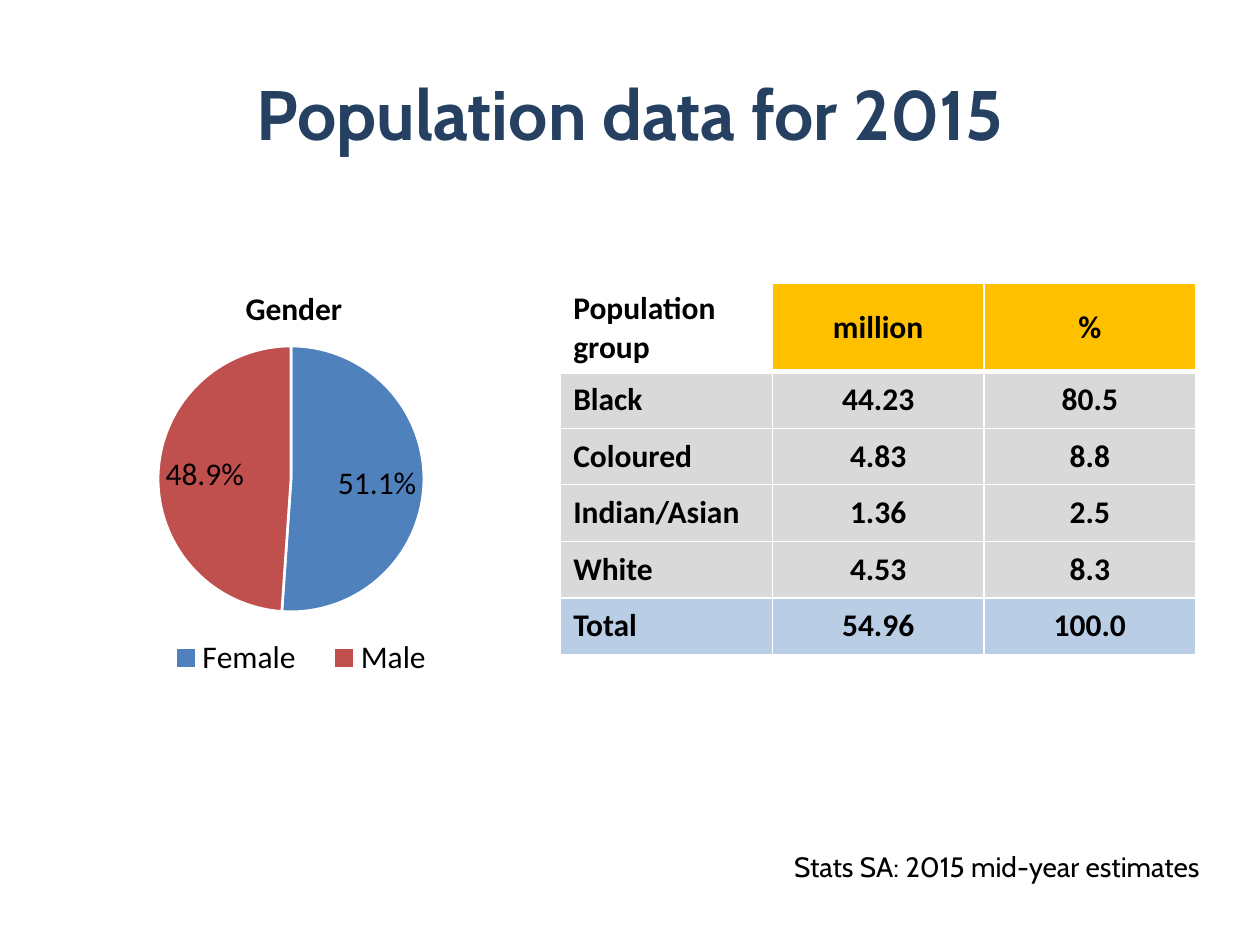
import pptx
import pptx.chart.data
import pptx.dml.color
import pptx.enum.chart
import pptx.enum.text
import pptx.oxml
import pptx.oxml.ns
import pptx.util

Pt = pptx.util.Pt
qn = pptx.oxml.ns.qn
ALIGN = pptx.enum.text.PP_ALIGN
MIDDLE = pptx.enum.text.MSO_ANCHOR.MIDDLE
POS = pptx.enum.chart.XL_LABEL_POSITION
BLACK, WHITE = "000000", "FFFFFF"

TITLE = "Population data for 2015"
SOURCE = "Stats SA: 2015 mid-year estimates"
GENDER = [("Female", 0.511, "4F81BD"), ("Male", 0.489, "C0504D")]
ROWS = [
    ("Population group", "million", "%"),
    ("Black", "44.23", "80.5"),
    ("Coloured", "4.83", "8.8"),
    ("Indian/Asian", "1.36", "2.5"),
    ("White", "4.53", "8.3"),
    ("Total", "54.96", "100.0"),
]
HEAD, BODY, TOTAL = "FFC000", "D9D9D9", "B9CDE5"
TABLE = (320.4, 162, 362.88, 211)
HEAD_H, ROW_H = 49.6, 32.3


def color(code):
    return pptx.dml.color.RGBColor.from_string(code)


def style(font, size, code=BLACK, face="Calibri", bold=False):
    font.size, font.name, font.bold = Pt(size), face, bold
    font.color.rgb = color(code)


def write(frame, text, align, *look):
    """Put one styled run in the first paragraph."""
    para = frame.paragraphs[0]
    para.alignment = align
    run = para.add_run()
    run.text = text
    style(run.font, *look)


def add_text(slide, box, text, align, *look):
    frame = slide.shapes.add_textbox(*map(Pt, box)).text_frame
    frame.word_wrap = True
    frame.vertical_anchor = MIDDLE
    write(frame, text, align, *look)


def border(cell, side, width):
    line = pptx.oxml.parse_xml(
        f'<a:{side} {pptx.oxml.ns.nsdecls("a")} w="{Pt(width)}"><a:solidFill>'
        f'<a:srgbClr val="{WHITE}"/></a:solidFill></a:{side}>')
    cell.fill  # borders go ahead of the fill in the cell properties
    props = cell._tc.get_or_add_tcPr()
    spot = len(props.findall(qn("a:lnL")) + props.findall(qn("a:lnR"))
               + props.findall(qn("a:lnT")))
    props.insert(spot, line)


def add_table(slide):
    table = slide.shapes.add_table(len(ROWS), 3, *map(Pt, TABLE)).table
    for col in table.columns:
        col.width = Pt(TABLE[2] / 3)
    last = len(ROWS) - 1
    for r, row in enumerate(ROWS):
        table.rows[r].height = Pt(ROW_H if r else HEAD_H)
        fill = {0: HEAD, last: TOTAL}.get(r, BODY)
        for c, text in enumerate(row):
            cell = table.cell(r, c)
            cell.vertical_anchor = MIDDLE
            if r == c == 0:
                cell.fill.background()
            else:
                cell.fill.solid()
                cell.fill.fore_color.rgb = color(fill)
            write(cell.text_frame, text, ALIGN.CENTER if c else ALIGN.LEFT,
                  18, BLACK, "Calibri", True)
            for side in ("lnL", "lnR", "lnT", "lnB"):
                edge = (r == 0 and side == "lnB") or (r == 1 and side == "lnT")
                border(cell, side, 3 if edge else 1)


def place(part, **spots):
    """Fix a chart part at fractions of the chart's size."""
    for old in part.findall(qn("c:layout")):
        part.remove(old)
    inner = '<c:layoutTarget val="inner"/>' if part.tag == qn("c:plotArea") else ""
    modes = "".join(f'<c:{k}Mode val="edge"/>' for k in "xy")
    sizes = "".join(f'<c:{k} val="{v}"/>' for k, v in spots.items())
    layout = pptx.oxml.parse_xml(
        f'<c:layout {pptx.oxml.ns.nsdecls("c")}><c:manualLayout>'
        f'{inner}{modes}{sizes}</c:manualLayout></c:layout>')
    after = part.find(qn("c:overlay"))
    if after is None:
        part.insert(0, layout)
    else:
        after.addprevious(layout)


def add_pie(slide):
    data = pptx.chart.data.CategoryChartData(number_format="0.0%")
    data.categories = [name for name, _, _ in GENDER]
    data.add_series("Series 1", [value for _, value, _ in GENDER])
    box = map(Pt, (20.16, 145.44, 292.32, 249.12))
    chart = slide.shapes.add_chart(
        pptx.enum.chart.XL_CHART_TYPE.PIE, *box, data).chart
    style(chart.font, 18)
    chart.has_title = True
    write(chart.chart_title.text_frame, "Gender", ALIGN.CENTER,
          18, BLACK, "Calibri", True)
    chart.chart_title.include_in_layout = False
    chart.has_legend = True
    chart.legend.position = pptx.enum.chart.XL_LEGEND_POSITION.BOTTOM
    chart.legend.include_in_layout = False
    style(chart.legend.font, 18)
    plot = chart.plots[0]
    plot.vary_by_categories = True
    plot.has_data_labels = True
    labels = plot.data_labels
    labels.show_value, labels.show_percentage = True, False
    labels.number_format, labels.number_format_is_linked = "0.0%", False
    labels.position = POS.INSIDE_END
    style(labels.font, 18)
    for i, (_, _, code) in enumerate(GENDER):
        form = plot.series[0].points[i].format
        form.fill.solid()
        form.fill.fore_color.rgb = color(code)
        form.line.color.rgb = color(WHITE)
        form.line.width = Pt(1.5)
    place(chart.chart_title._element, x=0.4, y=0.06)
    place(chart.legend._element, x=0.22, y=0.87, w=0.6, h=0.11)
    place(plot._element.getparent(), x=0.24, y=0.21, w=0.52, h=0.61)


def main():
    deck = pptx.Presentation()
    deck.slide_width, deck.slide_height = Pt(720), Pt(540)
    slide = deck.slides.add_slide(deck.slide_layouts[6])
    add_text(slide, (8.64, 27.36, 702.72, 73.44), TITLE, ALIGN.CENTER,
             40, "254061", "Cabin", True)
    add_table(slide)
    add_text(slide, (115.92, 481.68, 576.72, 26.64), SOURCE, ALIGN.RIGHT,
             16, BLACK, "Cabin")
    add_pie(slide)
    deck.save("out.pptx")


if __name__ == "__main__":
    main()
